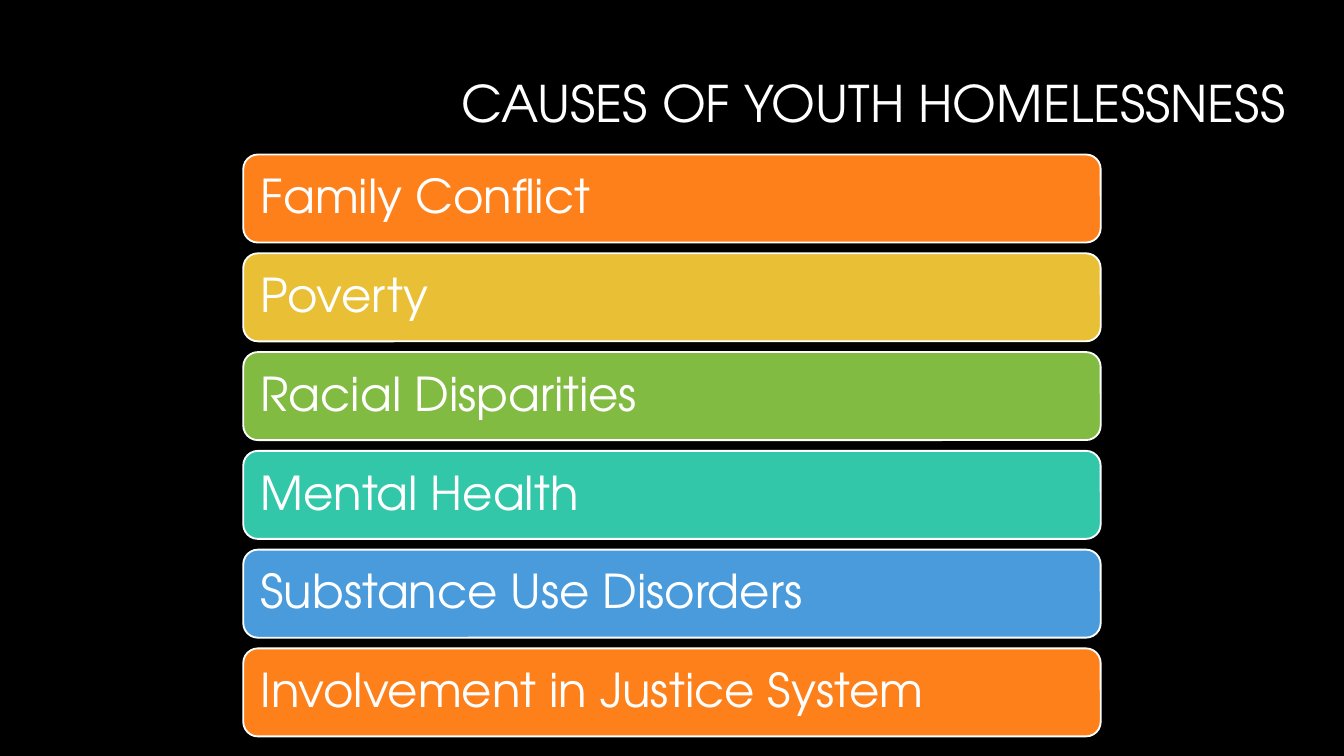
from pptx import Presentation
from pptx.dml.color import RGBColor
from pptx.enum.shapes import MSO_SHAPE
from pptx.enum.text import MSO_ANCHOR, MSO_AUTO_SIZE, PP_ALIGN
from pptx.util import Inches, Pt

FONT = "TeX Gyre Adventor"
WHITE = "FFFFFF"
CAUSES = [
    ("Family Conflict", "FE801A"),
    ("Poverty", "E9BF35"),
    ("Racial Disparities", "81BB42"),
    ("Mental Health", "32C7A9"),
    ("Substance Use Disorders", "4A9BDC"),
    ("Involvement in Justice System", "FE801A"),
]


def paint(color_format, color):
    color_format.rgb = RGBColor.from_string(color)


def write(shape, text, size, align, anchor):
    frame = shape.text_frame
    frame.word_wrap = True
    frame.auto_size = MSO_AUTO_SIZE.NONE
    frame.vertical_anchor = anchor
    frame.margin_left = frame.margin_right = Inches(0.1)
    frame.margin_top = frame.margin_bottom = Inches(0.1)
    para = frame.paragraphs[0]
    para.text = text
    para.alignment = align
    para.line_spacing = 0.9
    para.space_before = Pt(0)
    para.font.name = FONT
    para.font.size = Pt(size)
    paint(para.font.color, WHITE)


def place_title(page, text, left, top, width, height):
    title = page.shapes.title
    title.left, title.top = Inches(left), Inches(top)
    title.width, title.height = Inches(width), Inches(height)
    write(title, text, 27, PP_ALIGN.RIGHT, MSO_ANCHOR.TOP)


def add_bars(page, items, left, top, width, height, gap):
    bar_height = (height - gap * (len(items) - 1)) / len(items)
    for index, (text, color) in enumerate(items):
        bar_top = top + index * (bar_height + gap)
        bar = page.shapes.add_shape(
            MSO_SHAPE.ROUNDED_RECTANGLE,
            Inches(left), Inches(bar_top), Inches(width), Inches(bar_height))
        bar.shadow.inherit = False
        bar.fill.solid()
        paint(bar.fill.fore_color, color)
        paint(bar.line.color, WHITE)
        bar.line.width = Pt(1)
        write(bar, text, 25, PP_ALIGN.LEFT, MSO_ANCHOR.MIDDLE)


def main():
    deck = Presentation()
    deck.slide_width = Inches(10)
    deck.slide_height = deck.slide_width * 9 // 16
    page = deck.slides.add_slide(deck.slide_layouts[5])
    page.background.fill.solid()
    paint(page.background.fill.fore_color, "000000")
    place_title(page, "CAUSES OF YOUTH HOMELESSNESS", 0.34, 0.49, 9.32, 0.63)
    add_bars(page, CAUSES, left=1.81, top=1.15, width=6.38, height=4.33, gap=0.08)
    deck.save("out.pptx")


if __name__ == "__main__":
    main()
